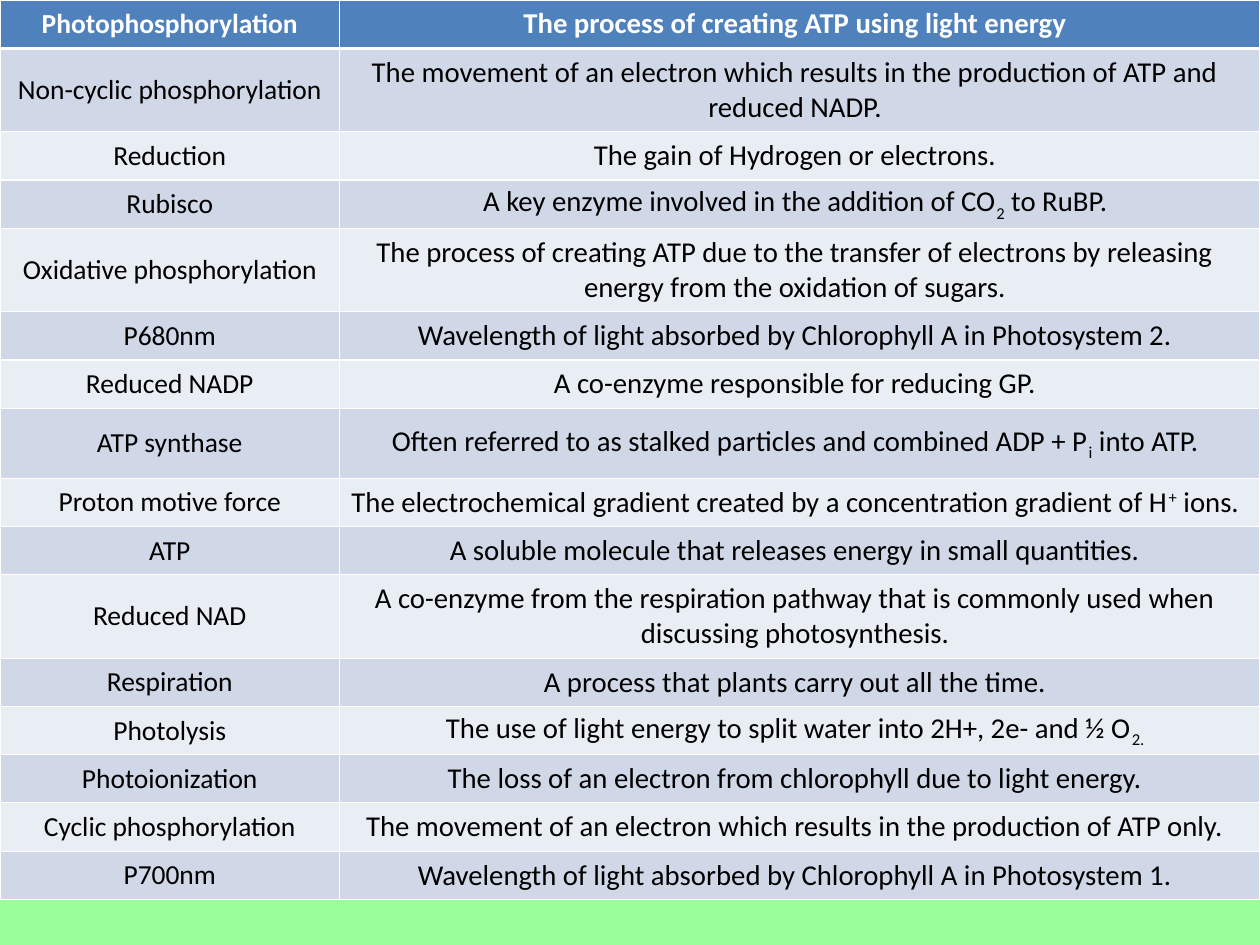
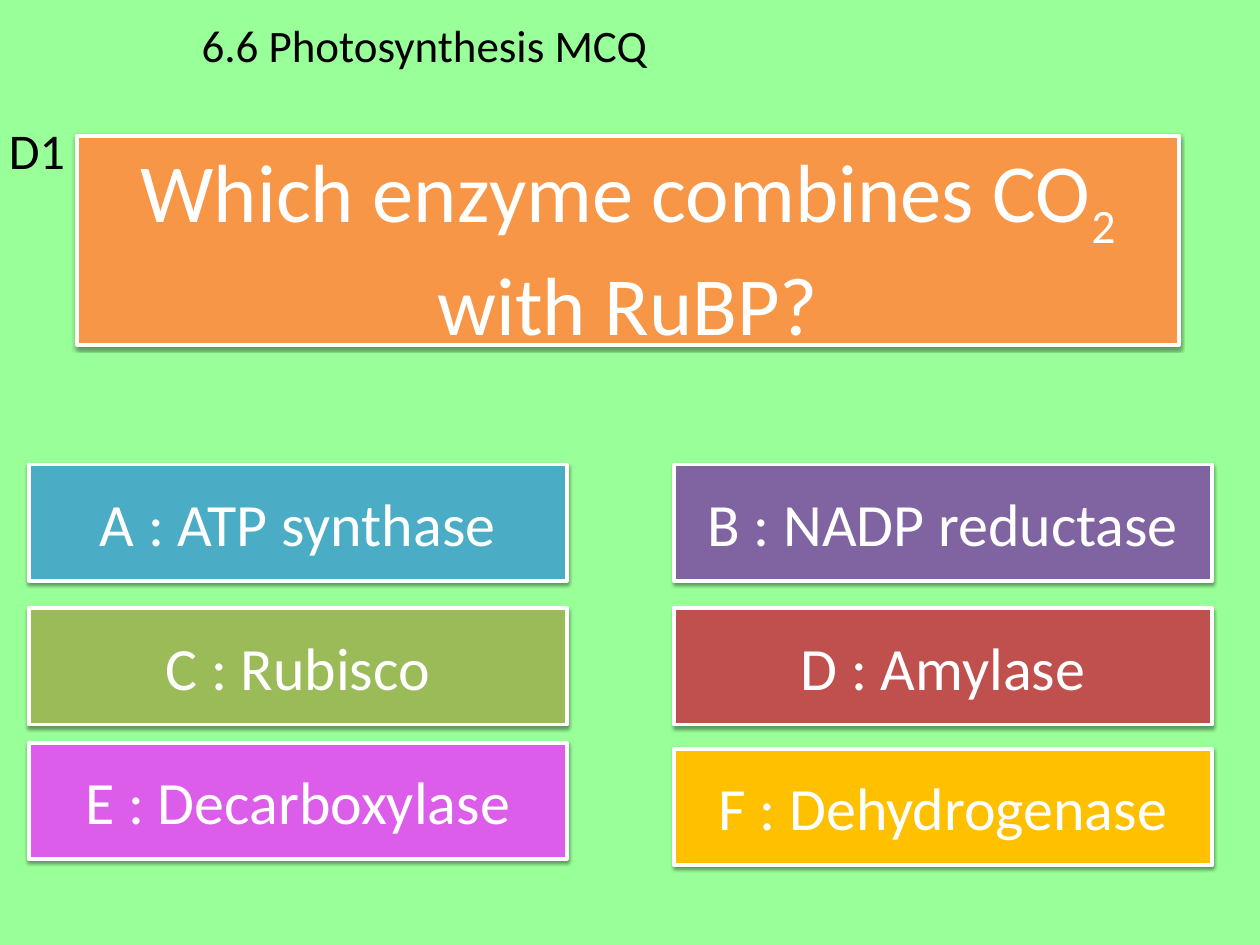
"""Build a photosynthesis glossary slide and a quiz slide."""
from dataclasses import dataclass

from lxml.etree import SubElement
from pptx import Presentation
from pptx.dml.color import RGBColor
from pptx.enum.shapes import MSO_SHAPE
from pptx.enum.text import MSO_ANCHOR, MSO_AUTO_SIZE, PP_ALIGN
from pptx.oxml import parse_xml
from pptx.oxml.ns import nsdecls, qn
from pptx.slide import Slide
from pptx.table import _Cell
from pptx.text.text import _Paragraph
from pptx.util import Cm, Pt

FONT = "Calibri"
GREEN, WHITE, BLACK = "99FF99", "FFFFFF", "000000"
HEAD, BANDS = "4F81BD", ("E9EDF4", "D0D8E8")
WIDTHS = (9.58, 25.98)
LOW, MID, TALL = 1.36, 1.98, 2.36
SHIFT = {"+": "30000"}


@dataclass(frozen=True)
class Term:
    """A glossary row; bars in the meaning enclose raised or lowered text."""
    name: str
    sense: str
    height: float = LOW


@dataclass(frozen=True)
class Box:
    """A filled box or, without a fill, a plain label; lengths in cm."""
    text: str
    left: float
    top: float
    width: float
    height: float
    size: int
    fill: str = ""
    grow: bool = False


TERMS = (
    Term("Photophosphorylation", "The process of creating ATP using light energy"),
    Term("Non-cyclic phosphorylation",
         "The movement of an electron which results in the production of ATP and reduced NADP.", TALL),
    Term("Reduction", "The gain of Hydrogen or electrons."),
    Term("Rubisco", "A key enzyme involved in the addition of CO|2| to RuBP."),
    Term("Oxidative phosphorylation",
         "The process of creating ATP due to the transfer of electrons by releasing "
         "energy from the oxidation of sugars.", TALL),
    Term("P680nm", "Wavelength of light absorbed by Chlorophyll A in Photosystem 2."),
    Term("Reduced NADP", "A co-enzyme responsible for reducing GP."),
    Term("ATP synthase",
         "Often referred to as stalked particles and combined ADP + P|i| into ATP.", MID),
    Term("Proton motive force",
         "The electrochemical gradient created by a concentration gradient of H|+| ions."),
    Term("ATP", "A soluble molecule that releases energy in small quantities."),
    Term("Reduced NAD",
         "A co-enzyme from the respiration pathway that is commonly used when "
         "discussing photosynthesis.", TALL),
    Term("Respiration", "A process that plants carry out all the time."),
    Term("Photolysis", "The use of light energy to split water into 2H+, 2e- and ½ O|2."),
    Term("Photoionization", "The loss of an electron from chlorophyll due to light energy."),
    Term("Cyclic phosphorylation",
         "The movement of an electron which results in the production of ATP only."),
    Term("P700nm", "Wavelength of light absorbed by Chlorophyll A in Photosystem 1."),
)

LEFTS = (0.81, 19.02)
TOPS = (13.11, 13.11, 17.17, 17.17, 20.96, 21.13)
CHOICES = (
    ("A : ATP synthase", "4BACC6"),
    ("B : NADP reductase", "8064A2"),
    ("C : Rubisco", "9BBB59"),
    ("D : Amylase", "C0504D"),
    ("E : Decarboxylase", "DC5DE9"),
    ("F : Dehydrogenase", "FFC000"),
)
QUIZ = (
    Box("Which enzyme combines CO|2| with RuBP?", 2.18, 3.84, 31.09, 5.89, 66, "F79646", True),
    *(Box(text, LEFTS[i % 2], TOPS[i], 15.19, 3.28, 48, fill)
      for i, (text, fill) in enumerate(CHOICES)),
    Box("D1", 0, 3.25, 2.18, 1.96, 40, grow=True),
    Box("6.6 Photosynthesis MCQ", 5.44, 0.38, 14.48, 1.8, 36, grow=True),
)


def paint(target, tint: str) -> None:
    """Give a fill one solid colour."""
    target.solid()
    target.fore_color.rgb = RGBColor.from_string(tint)


def write(para: _Paragraph, text: str, size: int, tint: str, bold: bool = False) -> None:
    """Write text whose every second bar-split part leaves the baseline."""
    first, *rest = text.split("|")
    para.text = first
    for part in rest:
        para.add_run().text = part
    for i, run in enumerate(para.runs):
        run.font.name, run.font.size, run.font.bold = FONT, Pt(size), bold
        paint(run.font.fill, tint)
        if i % 2:
            run._r.get_or_add_rPr().set("baseline", SHIFT.get(run.text, "-25000"))


def edge(cell: _Cell, side: str, width: float) -> None:
    """Draw one white cell border."""
    line = SubElement(cell._tc.get_or_add_tcPr(), qn(f"a:ln{side}"), w=str(Pt(width)))
    SubElement(SubElement(line, qn("a:solidFill")), qn("a:srgbClr"), val=WHITE)


def add_terms(slide: Slide) -> None:
    """Draw the glossary table."""
    total = sum(term.height for term in TERMS)
    table = slide.shapes.add_table(
        len(TERMS), len(WIDTHS), 0, 0, Cm(sum(WIDTHS)), Cm(total)).table
    for column, width in zip(table.columns, WIDTHS):
        column.width = Cm(width)
    for i, term in enumerate(TERMS):
        table.rows[i].height = Cm(term.height)
        for j, (text, size) in enumerate(((term.name, 22), (term.sense, 23))):
            cell = table.cell(i, j)
            cell.vertical_anchor = MSO_ANCHOR.MIDDLE
            if j:
                cell.margin_right = Cm(0.51)
            para = cell.text_frame.paragraphs[0]
            para.alignment = PP_ALIGN.CENTER
            write(para, text, size, BLACK if i else WHITE, i == 0)
            for side, width in (("L", 1), ("R", 1), ("T", 3 if i == 1 else 1),
                                ("B", 1 if i else 3)):
                edge(cell, side, width)
            paint(cell.fill, BANDS[i % 2] if i else HEAD)


def add_shade(shape) -> None:
    """Cast a soft shadow straight down."""
    shape.shadow.inherit = False
    shape._element.spPr.find(qn("a:effectLst")).append(parse_xml(
        f'<a:outerShdw {nsdecls("a")} blurRad="40000" dist="20000" dir="5400000" '
        f'rotWithShape="0"><a:srgbClr val="{BLACK}"><a:alpha val="38000"/>'
        '</a:srgbClr></a:outerShdw>'))


def add_box(slide: Slide, box: Box) -> None:
    """Draw a quiz box or label."""
    place = [Cm(n) for n in (box.left, box.top, box.width, box.height)]
    if box.fill:
        shape = slide.shapes.add_shape(MSO_SHAPE.RECTANGLE, *place)
        paint(shape.fill, box.fill)
        paint(shape.line.fill, WHITE)
        shape.line.width = Pt(3)
        add_shade(shape)
    else:
        shape = slide.shapes.add_textbox(*place)
    frame = shape.text_frame
    frame.word_wrap = True
    frame.vertical_anchor = MSO_ANCHOR.TOP if box.grow else MSO_ANCHOR.MIDDLE
    frame.auto_size = MSO_AUTO_SIZE.SHAPE_TO_FIT_TEXT if box.grow else MSO_AUTO_SIZE.NONE
    para = frame.paragraphs[0]
    para.alignment = PP_ALIGN.CENTER if box.fill else PP_ALIGN.LEFT
    write(para, box.text, box.size, WHITE if box.fill else BLACK)


def add_page(deck) -> Slide:
    """Add a blank slide with the green ground."""
    slide = deck.slides.add_slide(deck.slide_layouts[6])
    paint(slide.background.fill, GREEN)
    return slide


def main() -> None:
    """Build and save the deck."""
    deck = Presentation()
    deck.slide_width, deck.slide_height = Cm(35.56), Cm(26.67)
    add_terms(add_page(deck))
    quiz = add_page(deck)
    for box in QUIZ:
        add_box(quiz, box)
    deck.save("out.pptx")


if __name__ == "__main__":
    main()
